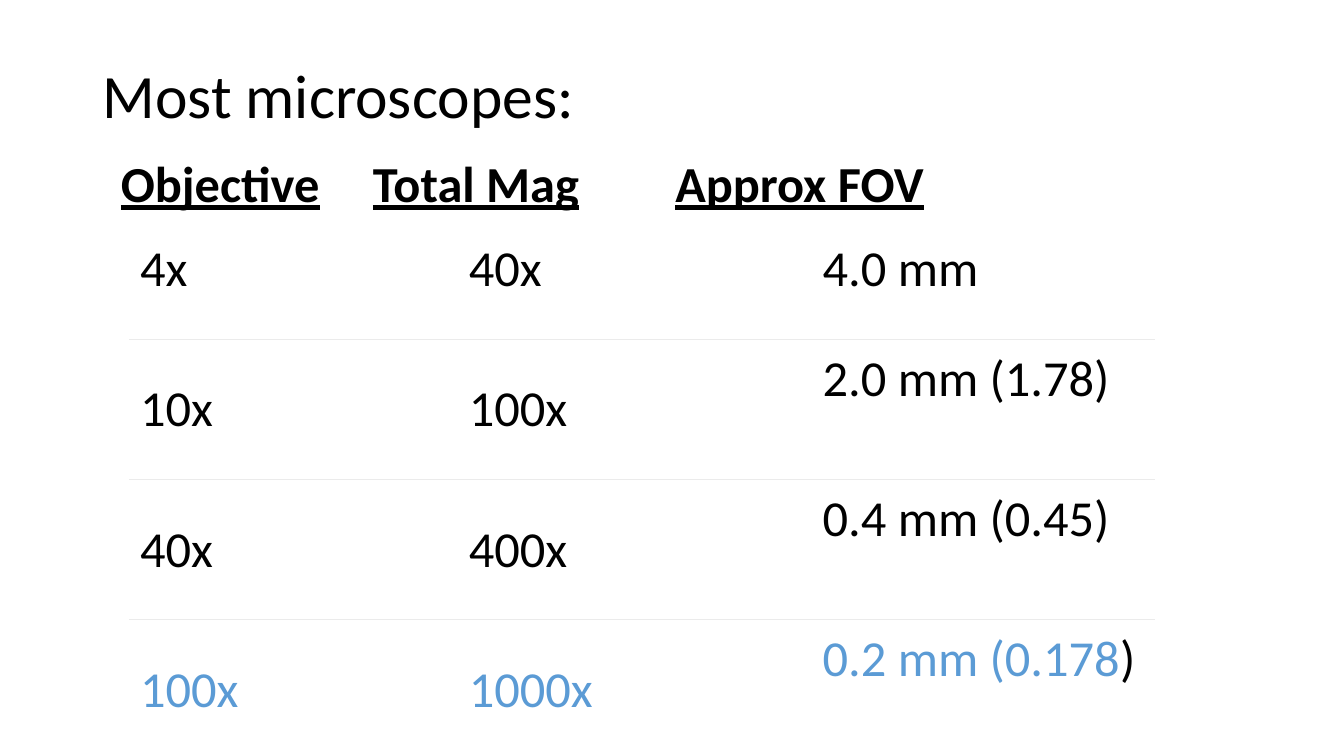
from pptx import Presentation
from pptx.dml.color import RGBColor
from pptx.enum.text import MSO_ANCHOR as Anchor
from pptx.oxml import parse_xml
from pptx.oxml.ns import nsdecls
from pptx.util import Inches, Pt

# Content: each text is a list of (words, colour name) spans
TITLE = "Most microscopes:"
HEADINGS = ["Objective", "Total Mag", "Approx FOV"]
ROWS = [
    [[("4x", "ink")], [("40x", "ink")], [("4.0 mm", "ink")]],
    [[("10x", "ink")], [("100x", "ink")], [("2.0 mm (1.78)", "ink")]],
    [[("40x", "ink")], [("400x", "ink")], [("0.4 mm (0.45)", "ink")]],
    [[("100x", "blue")], [("1000x", "blue")],
     [("0.2 mm (0.178", "blue"), (")", "ink")]],
]

# Format
COLOURS = {"ink": "000000", "blue": "5B9BD5", "paper": "FFFFFF", "rule": "EBEBEB"}
TITLE_FONT = {"name": "Calibri", "size": Pt(44)}
BODY_FONT = {"name": "Calibri", "size": Pt(36), "bold": False}
HEADING_FONT = {**BODY_FONT, "bold": True, "underline": True}
GAP_FONT = {**HEADING_FONT, "underline": False}

# Layout in inches
WIDTH, HEIGHT = 13.33, 7.5
TITLE_AREA = (0.92, 0.25, 11.5, 1.45)
HEADING_AREA = (1.1, 1.46, 10.16, 0.71)
TABLE_LEFT, TABLE_TOP = 1.29, 1.98
COLUMNS = [3.26, 3.51, 3.39]
ROW_HEIGHT = 1.39
RAISED_MARGIN = 0.68  # lifts the lower field-of-view values by half a line


def add_span(para, words, colour, font):
    span = para.add_run()
    span.text = words
    for name, value in font.items():
        setattr(span.font, name, value)
    span.font.color.rgb = RGBColor.from_string(COLOURS[colour])


def add_text_box(page, area, anchor):
    box = page.shapes.add_textbox(*map(Inches, area))
    box.text_frame.word_wrap = True
    box.text_frame.vertical_anchor = anchor
    return box.text_frame.paragraphs[0]


def add_rule(cell, side):
    cell._tc.get_or_add_tcPr().append(parse_xml(
        f'<a:{side} {nsdecls("a")} w="9525"><a:solidFill>'
        f'<a:srgbClr val="{COLOURS["rule"]}"/></a:solidFill></a:{side}>'))


deck = Presentation()
deck.slide_width, deck.slide_height = Inches(WIDTH), Inches(HEIGHT)
page = deck.slides.add_slide(deck.slide_layouts[6])

# Title
para = add_text_box(page, TITLE_AREA, Anchor.MIDDLE)
para.line_spacing = 0.9
add_span(para, TITLE, "ink", TITLE_FONT)

# Table of magnifications
frame = page.shapes.add_table(
    len(ROWS), len(COLUMNS), Inches(TABLE_LEFT), Inches(TABLE_TOP),
    Inches(sum(COLUMNS)), Inches(ROW_HEIGHT * len(ROWS)))
table = frame.table
table.first_row = table.horz_banding = False
for column, width in zip(table.columns, COLUMNS):
    column.width = Inches(width)

for r, row in enumerate(ROWS):
    table.rows[r].height = Inches(ROW_HEIGHT)
    for c, spans in enumerate(row):
        cell = table.cell(r, c)
        if r > 0:
            add_rule(cell, "lnT")
        if r < len(ROWS) - 1:
            add_rule(cell, "lnB")
        cell.fill.solid()
        cell.fill.fore_color.rgb = RGBColor.from_string(COLOURS["paper"])
        cell.vertical_anchor = Anchor.MIDDLE
        cell.margin_left = cell.margin_right = Inches(0.1)
        cell.margin_top = cell.margin_bottom = Inches(0.08)
        if r > 0 and c == len(COLUMNS) - 1:
            cell.margin_bottom = Inches(RAISED_MARGIN)
        for words, colour in spans:
            add_span(cell.text_frame.paragraphs[0], words, colour, BODY_FONT)

# Column headings, set apart by tabs
para = add_text_box(page, HEADING_AREA, Anchor.TOP)
for i, heading in enumerate(HEADINGS):
    if i > 0:
        add_span(para, "\t\t", "ink", GAP_FONT)
    add_span(para, heading, "ink", HEADING_FONT)

deck.save("out.pptx")
